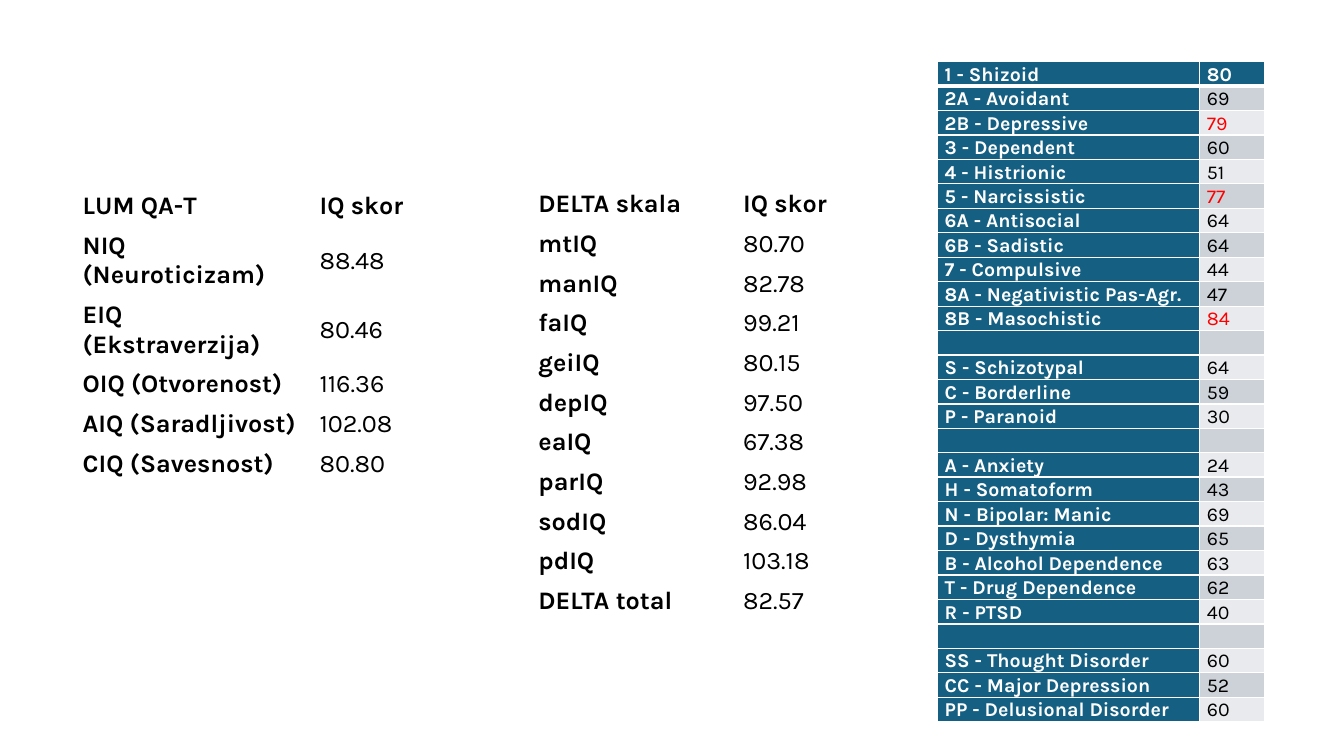
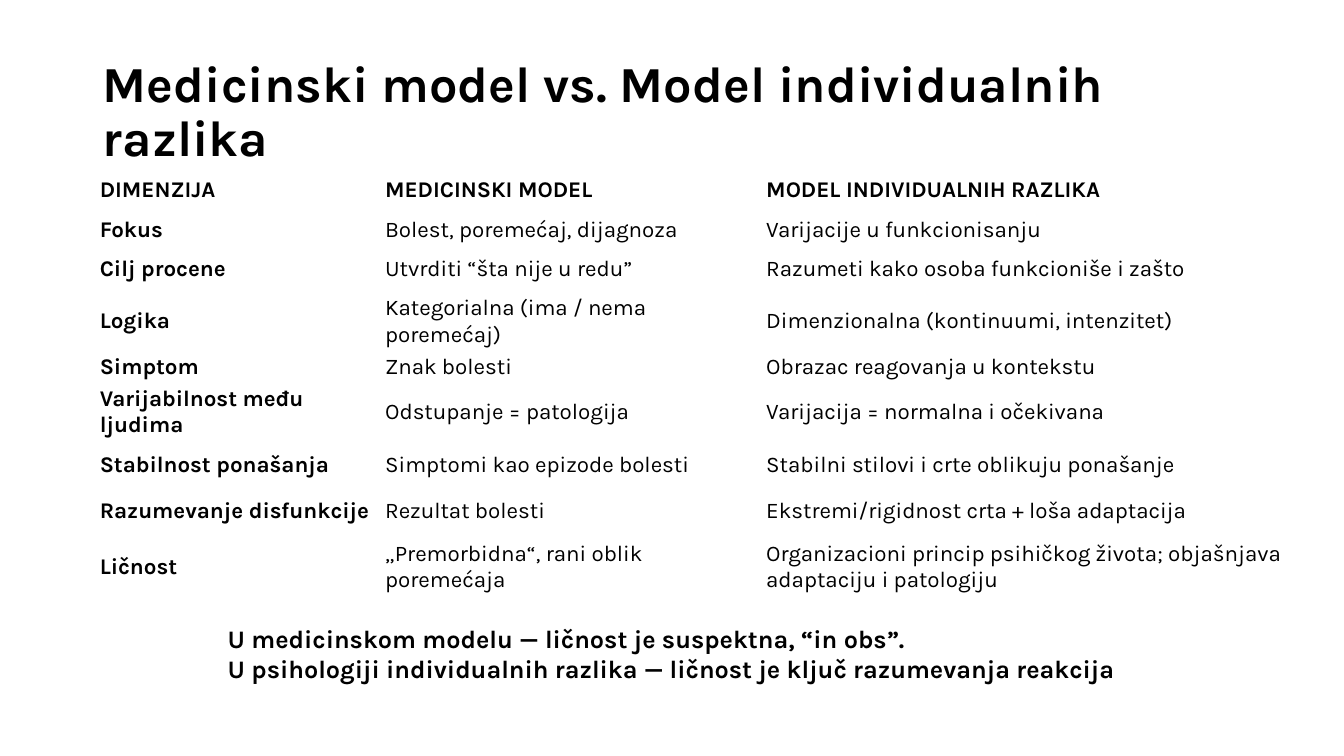
from lxml.etree import SubElement
from pptx import Presentation
from pptx.dml.color import RGBColor
from pptx.enum.text import MSO_ANCHOR, MSO_AUTO_SIZE, PP_ALIGN
from pptx.oxml.ns import qn
from pptx.util import Inches, Pt

FONT = "Karla"
BLACK = RGBColor(0x00, 0x00, 0x00)
WHITE = RGBColor(0xFF, 0xFF, 0xFF)
RED = RGBColor(0xFF, 0x00, 0x00)
TEAL = RGBColor(0x15, 0x60, 0x82)
BAND_DARK = RGBColor(0xCC, 0xD2, 0xD8)
BAND_LIGHT = RGBColor(0xE8, 0xEA, 0xED)

TITLE_ONLY, BLANK = 5, 6
ELEVATED_SCORE = 75


def write(frame, text, size=18, bold=False, color=BLACK, spacing=None, after=None):
    paragraph = frame.paragraphs[0]
    paragraph.text = text
    paragraph.alignment = PP_ALIGN.LEFT
    paragraph.line_spacing = spacing
    paragraph.space_after = after
    for run in paragraph.runs:
        run.font.name = FONT
        run.font.size = Pt(size)
        run.font.bold = bold
        run.font.color.rgb = color
    if not text:
        paragraph._p.get_or_add_endParaRPr().set("sz", str(size * 100))


def place_table(slide, left, top, widths, heights, margins=(0.1, 0.05), anchor=MSO_ANCHOR.MIDDLE):
    """Add an unfilled table; margins are the side and the top/bottom inset of each cell."""
    table = slide.shapes.add_table(
        len(heights), len(widths), Inches(left), Inches(top),
        Inches(sum(widths)), Inches(sum(heights))).table
    table.first_row = table.horz_banding = False
    for column, width in zip(table.columns, widths):
        column.width = Inches(width)
    for row, height in zip(table.rows, heights):
        row.height = Inches(height)
    for cell in table.iter_cells():
        cell.margin_left = cell.margin_right = Inches(margins[0])
        cell.margin_top = cell.margin_bottom = Inches(margins[1])
        cell.vertical_anchor = anchor
        cell.fill.background()
    return table


presentation = Presentation()
presentation.slide_width = Inches(13.33)
presentation.slide_height = Inches(7.5)

# Slide 1: test scores
scores = presentation.slides.add_slide(presentation.slide_layouts[BLANK])

trait_rows = [
    ("LUM QA-T", "IQ skor"),
    ("NIQ (Neuroticizam)", "88.48"),
    ("EIQ (Ekstraverzija)", "80.46"),
    ("OIQ (Otvorenost)", "116.36"),
    ("AIQ (Saradljivost)", "102.08"),
    ("CIQ (Savesnost)", "80.80"),
]
delta_rows = [
    ("DELTA skala", "IQ skor"),
    ("mtIQ", "80.70"),
    ("manIQ", "82.78"),
    ("faIQ", "99.21"),
    ("geiIQ", "80.15"),
    ("depIQ", "97.50"),
    ("eaIQ", "67.38"),
    ("parIQ", "92.98"),
    ("sodIQ", "86.04"),
    ("pdIQ", "103.18"),
    ("DELTA total", "82.57"),
]
for rows, left, top, width, height in [
    (trait_rows, 0.72, 1.85, 2.35, 0.13),
    (delta_rows, 5.24, 1.83, 2.03, 0.39),
]:
    iq_table = place_table(scores, left, top, [width] * 2, [height] * len(rows))
    for r, row in enumerate(rows):
        for c, text in enumerate(row):
            write(iq_table.cell(r, c).text_frame, text, bold=r == 0 or c == 0)

clinical_rows = [
    ("1 - Shizoid", "80"),
    ("2A - Avoidant", "69"),
    ("2B - Depressive", "79"),
    ("3 - Dependent", "60"),
    ("4 - Histrionic", "51"),
    ("5 - Narcissistic", "77"),
    ("6A - Antisocial", "64"),
    ("6B - Sadistic", "64"),
    ("7 - Compulsive", "44"),
    ("8A - Negativistic Pas-Agr.", "47"),
    ("8B - Masochistic", "84"),
    ("", ""),
    ("S - Schizotypal", "64"),
    ("C - Borderline", "59"),
    ("P - Paranoid", "30"),
    ("", ""),
    ("A - Anxiety", "24"),
    ("H - Somatoform", "43"),
    ("N - Bipolar: Manic", "69"),
    ("D - Dysthymia", "65"),
    ("B - Alcohol Dependence", "63"),
    ("T - Drug Dependence", "62"),
    ("R - PTSD", "40"),
    ("", ""),
    ("SS - Thought Disorder", "60"),
    ("CC - Major Depression", "52"),
    ("PP - Delusional Disorder", "60"),
]
clinical_table = place_table(scores, 9.3, 0.61, [2.6, 0.64], [0.24] * len(clinical_rows),
                             margins=(0.07, 0), anchor=MSO_ANCHOR.BOTTOM)
for r, row in enumerate(clinical_rows):
    for c, text in enumerate(row):
        cell = clinical_table.cell(r, c)
        heading = r == 0 or c == 0
        if heading:
            fill, color = TEAL, WHITE
        else:
            fill = BAND_DARK if r % 2 else BAND_LIGHT
            color = RED if text and int(text) > ELEVATED_SCORE else BLACK
        write(cell.text_frame, text, size=14, bold=heading, color=color,
              spacing=1.07, after=Pt(8))
        cell.fill.solid()
        cell.fill.fore_color.rgb = fill
        properties = cell._tc.get_or_add_tcPr()
        for position, side in enumerate(("lnL", "lnR", "lnT", "lnB")):
            under_header = (r, side) in ((0, "lnB"), (1, "lnT"))
            border = properties.makeelement(qn(f"a:{side}"), {"w": str(Pt(3 if under_header else 1))})
            border_fill = SubElement(border, qn("a:solidFill"))
            SubElement(border_fill, qn("a:srgbClr"), val=str(WHITE))
            properties.insert(position, border)

# Slide 2: comparison of the two models
models = presentation.slides.add_slide(presentation.slide_layouts[TITLE_ONLY])
title = models.shapes.title
title.left, title.top, title.width, title.height = (
    Inches(length) for length in (0.92, 0.4, 11.5, 1.45))
title.text_frame.auto_size = MSO_AUTO_SIZE.NONE
title.text_frame.vertical_anchor = MSO_ANCHOR.MIDDLE
write(title.text_frame, "Medicinski model vs. Model individualnih razlika",
      size=36, bold=True, spacing=0.9)

model_rows = [
    ("DIMENZIJA", "MEDICINSKI MODEL", "MODEL INDIVIDUALNIH RAZLIKA"),
    ("Fokus", "Bolest, poremećaj, dijagnoza", "Varijacije u funkcionisanju"),
    ("Cilj procene", "Utvrditi “šta nije u redu”", "Razumeti kako osoba funkcioniše i zašto"),
    ("Logika", "Kategorialna (ima / nema poremećaj)", "Dimenzionalna (kontinuumi, intenzitet)"),
    ("Simptom", "Znak bolesti", "Obrazac reagovanja u kontekstu"),
    ("Varijabilnost među ljudima", "Odstupanje = patologija", "Varijacija = normalna i očekivana"),
    ("Stabilnost ponašanja", "Simptomi kao epizode bolesti",
     "Stabilni stilovi i crte oblikuju ponašanje"),
    ("Razumevanje disfunkcije", "Rezultat bolesti", "Ekstremi/rigidnost crta + loša adaptacija"),
    ("Ličnost", "„Premorbidna“, rani oblik poremećaja",
     "Organizacioni princip psihičkog života; objašnjava adaptaciju i patologiju"),
]
model_table = place_table(models, 0.92, 1.66, [2.83, 3.78, 5.25],
                          [0.46, 0.26, 0.46, 0.46, 0.26, 0.26, 0.46, 0.46, 0.65],
                          margins=(0.07, 0.03))
for r, row in enumerate(model_rows):
    for c, text in enumerate(row):
        write(model_table.cell(r, c).text_frame, text, size=16, bold=r == 0 or c == 0)

conclusion = models.shapes.add_textbox(Inches(2.16), Inches(6.13), Inches(9.19), Inches(0.71))
conclusion.text_frame.word_wrap = True
write(conclusion.text_frame,
      "U medicinskom modelu — ličnost je suspektna, “in obs”.\v"
      "U psihologiji individualnih razlika — ličnost je ključ razumevanja reakcija", bold=True)

presentation.save("out.pptx")
